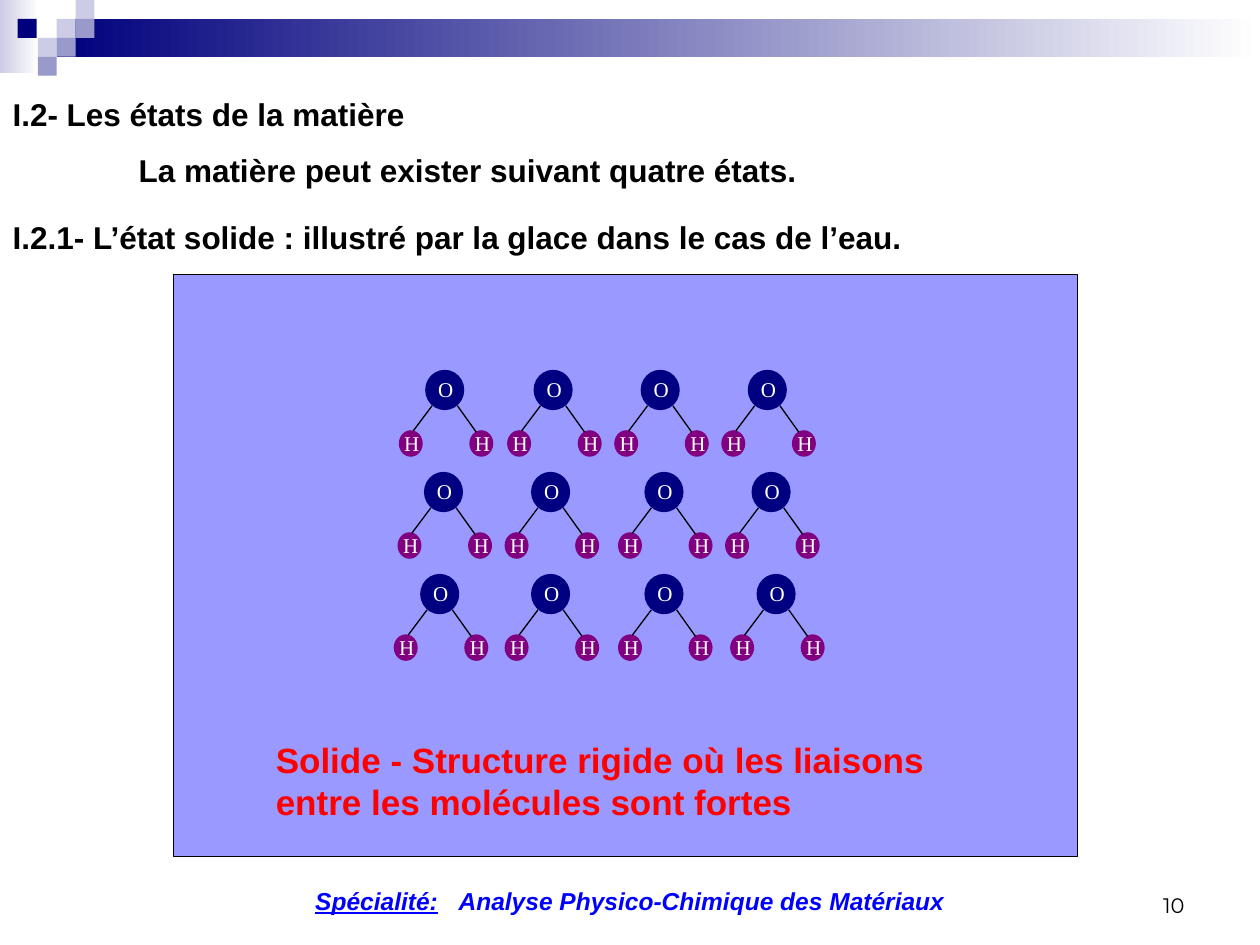
from typing import NamedTuple

from lxml.etree import SubElement
from pptx import Presentation
from pptx.dml.color import RGBColor
from pptx.enum.shapes import MSO_CONNECTOR as Connector, MSO_SHAPE as Shape
from pptx.enum.text import MSO_ANCHOR as Anchor, MSO_AUTO_SIZE as AutoSize, PP_ALIGN as Align
from pptx.oxml.ns import qn
from pptx.util import Pt

EMU_PER_PX = 9144  # 100 px to the inch


class Box(NamedTuple):
    left: int
    top: int
    width: int
    height: int

    def moved(self, dx: int, dy: int) -> "Box":
        return Box(self.left + dx, self.top + dy, self.width, self.height)


class Atom(NamedTuple):
    symbol: str
    color: str
    disc: Box
    label: Box


class Bond(NamedTuple):
    x1: int
    y1: int
    x2: int
    y2: int


class Square(NamedTuple):
    left: int
    top: int
    color: str


# One water molecule, measured from the corner of its oxygen disc
ATOMS = [
    Atom("H", "800080", Box(35, 48, 18, 20), Box(29, 43, 32, 30)),
    Atom("O", "000080", Box(0, 0, 30, 31), Box(0, 0, 33, 30)),
    Atom("H", "800080", Box(-21, 48, 18, 20), Box(-27, 43, 32, 30)),
]
BONDS = [Bond(5, 28, -10, 48), Bond(25, 28, 40, 49)]
MOLECULE_ROWS = {
    294: [338, 424, 509, 594],
    375: [337, 422, 512, 597],
    456: [334, 422, 512, 601],
}
SQUARES = [
    Square(45, 15, "CCCCE6"), Square(60, 0, "CCCCE6"), Square(60, 15, "9999CC"),
    Square(30, 30, "CCCCE6"), Square(14, 15, "00007D"), Square(45, 30, "9999CC"),
    Square(30, 45, "9999CC"),
]


def px(value: int) -> int:
    return value * EMU_PER_PX


def rgb(color: str) -> RGBColor:
    return RGBColor.from_string(color)


def write(paragraph, text: str, *, size: int, color: str = "000000", font: str = "Arial",
          bold: bool = False, italic: bool = False, underline: bool = False,
          spacing: int = 0) -> None:
    """Add a run; spacing is in hundredths of a point."""
    run = paragraph.add_run()
    run.text = text
    run.font.size = Pt(size)
    run.font.name = font
    run.font.color.rgb = rgb(color)
    run.font.bold, run.font.italic, run.font.underline = bold, italic, underline
    if spacing:
        run.font._element.set("spc", str(spacing))


def add_panel(shapes, kind: Shape, box: Box, color: str, *, fade_to: str = "", line: str = ""):
    shape = shapes.add_shape(kind, *map(px, box))
    shape.shadow.inherit = False
    if fade_to:
        shape.fill.gradient()
        shape.fill.gradient_angle = 0
        for stop, stop_color in zip(shape.fill.gradient_stops, (color, fade_to)):
            stop.color.rgb = rgb(stop_color)
    else:
        shape.fill.solid()
        shape.fill.fore_color.rgb = rgb(color)
    if line:
        shape.line.color.rgb = rgb(line)
        shape.line.width = Pt(0.75)
    else:
        shape.line.fill.background()
    return shape


def add_text_box(shapes, box: Box, *, wrap: bool = True, anchor: Anchor = Anchor.TOP,
                 align: Align = Align.LEFT):
    """Add a text box and return its first paragraph."""
    frame = shapes.add_textbox(*map(px, box)).text_frame
    frame.word_wrap = wrap
    frame.vertical_anchor = anchor
    frame.paragraphs[0].alignment = align
    return frame.paragraphs[0]


def add_bond(shapes, bond: Bond, left: int, top: int) -> None:
    ends = (bond.x1 + left, bond.y1 + top, bond.x2 + left, bond.y2 + top)
    line = shapes.add_connector(Connector.STRAIGHT, *map(px, ends))
    line.line.color.rgb = rgb("000000")
    line.line.width = Pt(0.75)
    SubElement(line._element.spPr, qn("a:effectLst"))


def add_molecule(slide, left: int, top: int) -> None:
    shapes = slide.shapes.add_group_shape().shapes
    for atom in ATOMS:
        add_panel(shapes, Shape.OVAL, atom.disc.moved(left, top), atom.color, line=atom.color)
        label = add_text_box(shapes, atom.label.moved(left, top), wrap=False)
        write(label, atom.symbol, size=12, color="FFFFFF", font="Times New Roman")
    for bond in BONDS:
        add_bond(shapes, bond, left, top)


def add_heading(slide) -> None:
    title = slide.shapes.title
    title.left, title.top, title.width, title.height = map(px, Box(0, 55, 1000, 155))
    frame = title.text_frame
    frame.word_wrap = True
    frame.auto_size = AutoSize.NONE
    frame.vertical_anchor = Anchor.TOP
    lines = [  # text, first-line indent, space before
        ("I.2- Les états de la matière", 0, 0),
        ("La matière peut exister suivant quatre états.", 100, 0),
        ("I.2.1- L’état solide : illustré par la glace dans le cas de l’eau.", 0, 6),
    ]
    for index, (text, indent, space) in enumerate(lines):
        paragraph = frame.add_paragraph() if index else frame.paragraphs[0]
        paragraph.alignment = Align.LEFT
        paragraph.line_spacing = 1.5
        paragraph.space_before = Pt(space)
        paragraph._p.get_or_add_pPr().set("indent", str(px(indent)))
        write(paragraph, text, size=18, bold=True)


def main() -> None:
    presentation = Presentation()
    presentation.slide_width, presentation.slide_height = px(1000), px(750)
    slide = presentation.slides.add_slide(presentation.slide_layouts[5])
    shapes = slide.shapes

    # Top banner
    add_panel(shapes, Shape.RECTANGLE, Box(0, 0, 31, 58), "CCCCE6", fade_to="FFFFFF")
    add_panel(shapes, Shape.RECTANGLE, Box(45, 15, 955, 30), "00007D", fade_to="FFFFFF")
    for square in SQUARES:
        add_panel(shapes, Shape.RECTANGLE, Box(square.left, square.top, 15, 15), square.color)

    add_heading(slide)

    # Ice lattice
    add_panel(shapes, Shape.RECTANGLE, Box(138, 218, 717, 462), "9999FF", line="000000")
    for top, lefts in MOLECULE_ROWS.items():
        for left in lefts:
            add_molecule(slide, left, top)
    caption = add_text_box(shapes, Box(209, 581, 575, 77))
    write(caption, "Solide - Structure rigide où les liaisons entre les molécules sont fortes",
          size=20, color="FF0000", bold=True)

    # Slide number and footer
    number = add_text_box(shapes, Box(717, 683, 233, 50), anchor=Anchor.BOTTOM, align=Align.RIGHT)
    write(number, "10", size=12, font="Montserrat")
    footer = add_text_box(shapes, Box(2, 698, 996, 34), align=Align.CENTER)
    footer_format = dict(size=14, color="0000FF", bold=True, italic=True)
    write(footer, "Spécialité:", underline=True, **footer_format)
    write(footer, " ", spacing=780, **footer_format)
    write(footer, "Analyse Physico-Chimique des Matériaux", **footer_format)

    presentation.save("out.pptx")


if __name__ == "__main__":
    main()
